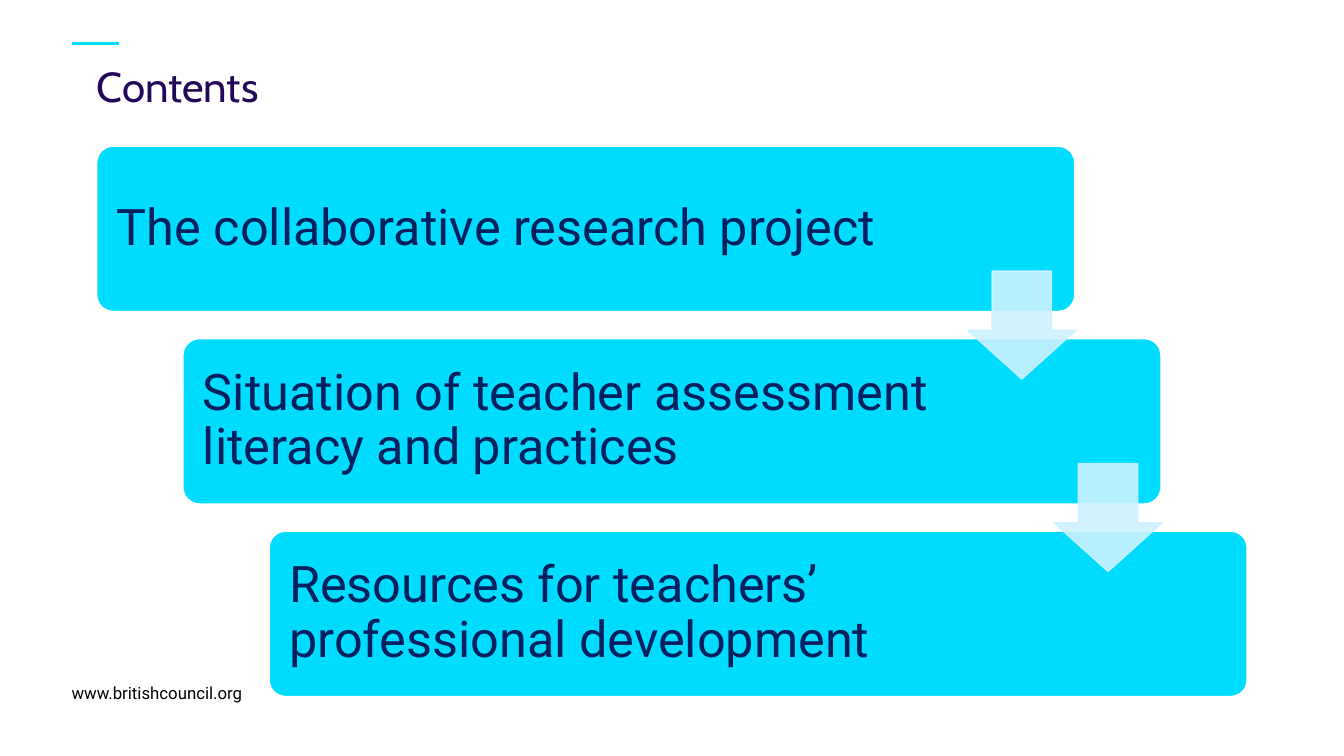
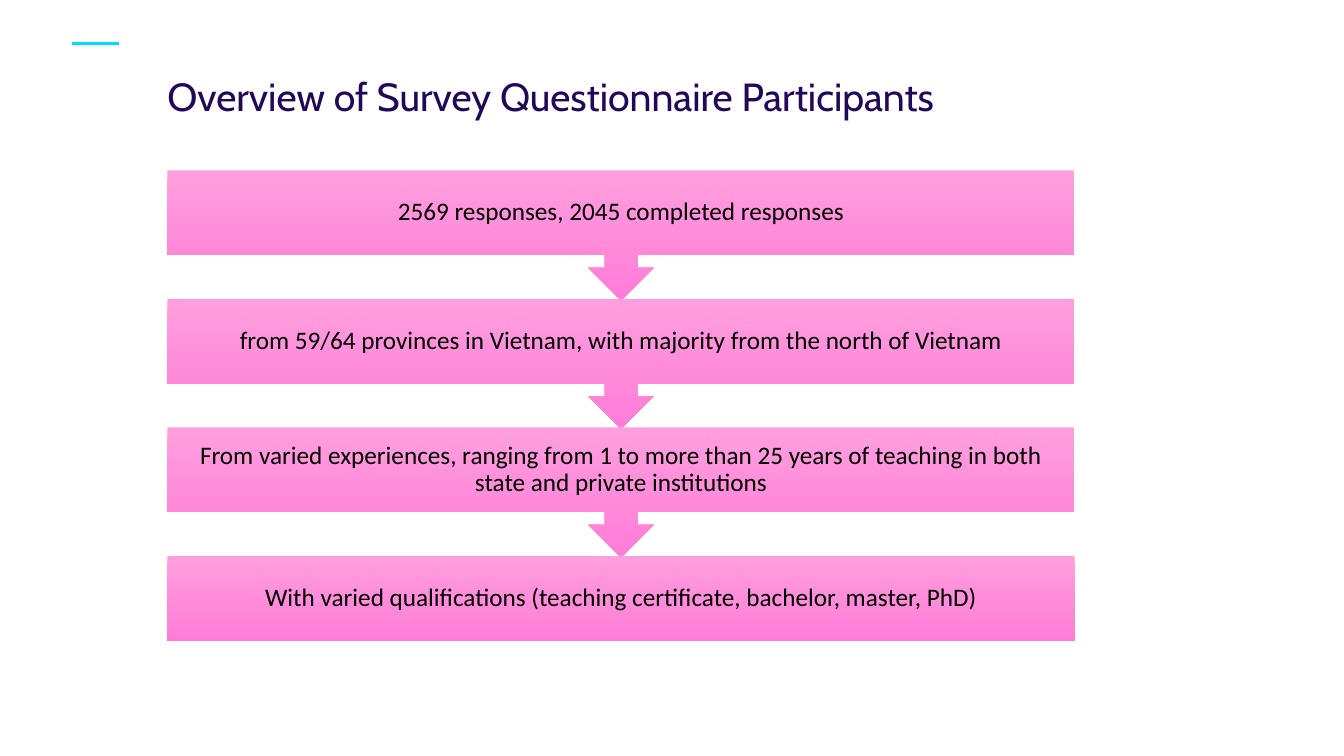
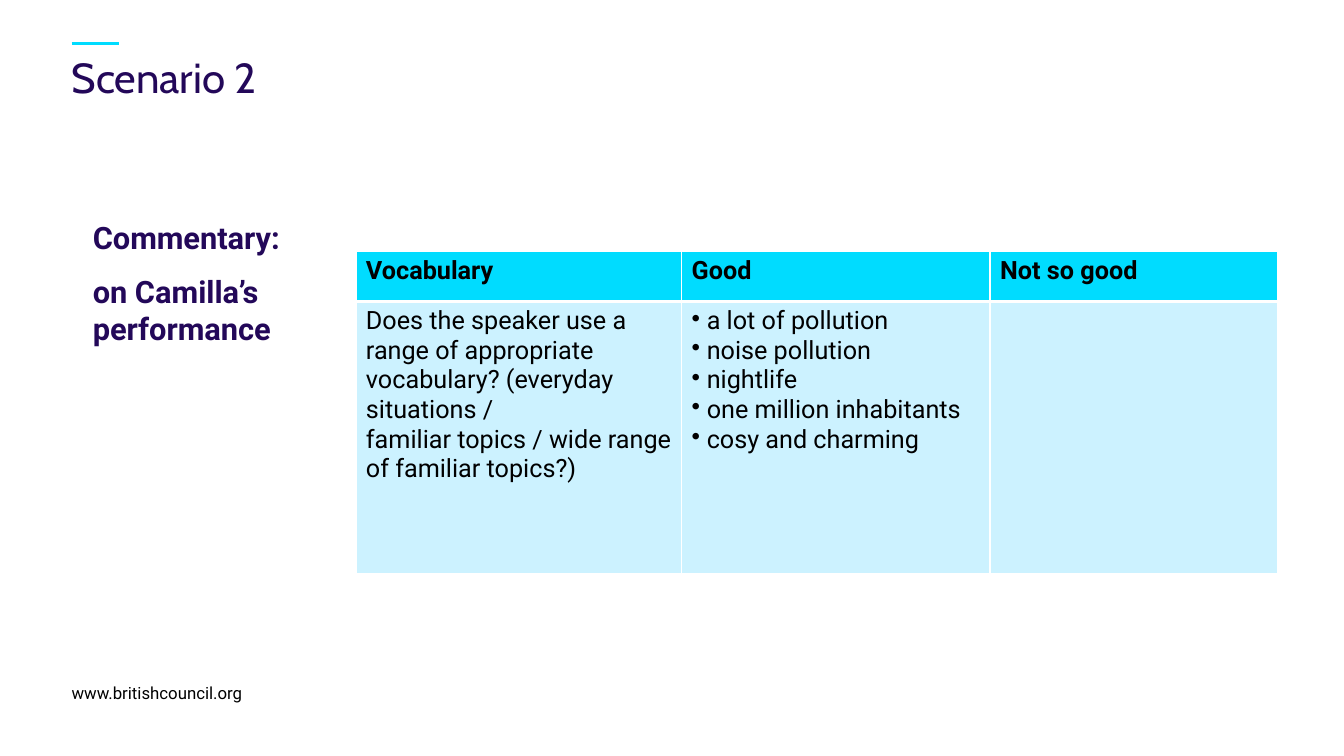
from lxml import etree
from pptx import Presentation
from pptx import util as u
from pptx.dml.color import RGBColor
from pptx.enum import shapes, text
from pptx.oxml.ns import qn

COLORS = {
    "cyan": "00DCFF", "pale": "CCF2FF", "purple": "230859", "navy": "002060",
    "pink_top": "FF9EDF", "pink_bottom": "FF7CD6", "white": "FFFFFF", "black": "000000",
}
SHAPE = shapes.MSO_SHAPE
ANCHOR = text.MSO_ANCHOR
ALIGN = text.PP_ALIGN
TITLE_ONLY, TITLE_AND_BODY = 5, 1


def rgb(name):
    """Return the palette colour of that name."""
    return RGBColor.from_string(COLORS[name])


def inches(*lengths):
    """Convert several lengths to inches."""
    return [u.Inches(length) for length in lengths]


def write(frame, lines, font, size, color, bold=False, align=ALIGN.LEFT, spacing=None, bullet=None):
    """Write one paragraph per line and format it."""
    frame.word_wrap = True
    frame.text = "\n".join(lines)
    for para in frame.paragraphs:
        para.alignment = align
        if spacing:
            para.line_spacing = spacing
        if bullet is not None:
            set_bullet(para, bullet)
        for span in para.runs:
            span.font.name, span.font.size, span.font.bold = font, u.Pt(size), bold
            span.font.color.rgb = rgb(color)


def set_bullet(para, mark):
    """Give a paragraph a hanging bullet, or none if the mark is empty."""
    props = para._p.get_or_add_pPr()
    indent = u.Inches(0.15) if mark else 0
    props.set("marL", str(indent))
    props.set("indent", str(-indent))
    if mark:
        etree.SubElement(props, qn("a:buChar")).set("char", mark)
    else:
        etree.SubElement(props, qn("a:buNone"))


def set_frame(frame, anchor, left=0, top=0, right=0, bottom=0):
    """Set the anchor and the insets of a text frame."""
    frame.auto_size = text.MSO_AUTO_SIZE.NONE
    frame.vertical_anchor = anchor
    frame.margin_left, frame.margin_top, frame.margin_right, frame.margin_bottom = inches(
        left, top, right, bottom)


def place(shape, box):
    """Move and size a shape to a box in inches."""
    shape.left, shape.top, shape.width, shape.height = inches(*box)


def add_page(deck, layout, title, box, size=30, anchor=ANCHOR.TOP):
    """Add a page with the accent line and its title."""
    page = deck.slides.add_slide(deck.slide_layouts[layout])
    accent = page.shapes.add_connector(
        shapes.MSO_CONNECTOR.STRAIGHT, *inches(0.71, 0.43, 1.18, 0.43))
    accent.line.color.rgb = rgb("cyan")
    accent.line.width = u.Pt(2.4)
    etree.SubElement(accent._element.spPr, qn("a:effectLst"))
    heading = page.shapes.title
    place(heading, box)
    set_frame(heading.text_frame, anchor)
    write(heading.text_frame, [title], "Cabin", size, "purple", spacing=u.Pt(33))
    return page


def add_footer(page):
    """Add the web address at the foot of the page."""
    footer = page.shapes.add_textbox(*inches(0.71, 6.77, 11.42, 0.2))
    set_frame(footer.text_frame, ANCHOR.BOTTOM)
    write(footer.text_frame, ["www.britishcouncil.org"], "Roboto", 12, "black")


def add_shape(page, kind, box):
    """Add a preset shape without shadow."""
    shape = page.shapes.add_shape(kind, *inches(*box))
    shape.shadow.inherit = False
    return shape


def paint(shape, fill, line):
    """Give a shape a solid fill and a thin outline."""
    shape.fill.solid()
    shape.fill.fore_color.rgb = rgb(fill)
    shape.line.color.rgb = rgb(line)
    shape.line.width = u.Pt(1)


def add_staircase(page, items, left, top):
    """Draw stepped cards joined by translucent arrows."""
    width, height, step_x, step_y, arrow_size = 9.7, 1.64, 0.855, 1.91, 1.07
    for index, item in enumerate(items):
        card = add_shape(page, SHAPE.ROUNDED_RECTANGLE,
                         (left + index * step_x, top + index * step_y, width, height))
        card.adjustments[0] = 0.1
        paint(card, "cyan", "white")
        set_frame(card.text_frame, ANCHOR.MIDDLE, 0.15, 0.15, 1.8, 0.15)
        write(card.text_frame, [item], "Roboto", 36, "navy", spacing=0.9)
    for index in range(len(items) - 1):
        arrow = add_shape(page, SHAPE.DOWN_ARROW,
                          (left + 8.64 + index * step_x, top + 1.24 + index * step_y,
                           arrow_size, arrow_size))
        arrow.adjustments[0], arrow.adjustments[1] = 0.55, 0.45
        paint(arrow, "pale", "pale")
        for color in arrow._element.spPr.iter(qn("a:srgbClr")):
            etree.SubElement(color, qn("a:alpha")).set("val", "90000")


def add_flow(page, items, left, top):
    """Draw a column of callouts, each pointing to the next."""
    width, body_height, callout_height, step = 9, 0.84, 1.29, 1.275
    for index, item in enumerate(items):
        last = index == len(items) - 1
        kind = SHAPE.RECTANGLE if last else SHAPE.DOWN_ARROW_CALLOUT
        height = body_height if last else callout_height
        callout = add_shape(page, kind, (left, top + index * step, width, height))
        callout.fill.gradient()
        callout.fill.gradient_angle = 270
        for stop, color in zip(callout.fill.gradient_stops, ("pink_top", "pink_bottom")):
            stop.color.rgb = rgb(color)
        callout.line.fill.background()
        set_frame(callout.text_frame, ANCHOR.MIDDLE, 0.14, 0.14, 0.14, 0.14)
        write(callout.text_frame, [item], "Calibri", 18, "black", align=ALIGN.CENTER, spacing=0.9)


def add_commentary(page, lines, box):
    """Fill the body placeholder with bold lines."""
    body = page.placeholders[1]
    place(body, box)
    set_frame(body.text_frame, ANCHOR.TOP)
    write(body.text_frame, lines, "Roboto", 22, "purple", bold=True, bullet="")
    for index, para in enumerate(body.text_frame.paragraphs):
        para.space_before = u.Pt(6 if index else 0)
        para.space_after = u.Pt(6)


def set_borders(cell, **widths):
    """Draw white borders of the given widths in points."""
    props = cell._tc.get_or_add_tcPr()
    for side in "LRTB":
        border = etree.SubElement(props, qn("a:ln" + side))
        border.set("w", str(u.Pt(widths.get(side, 1))))
        fill = etree.SubElement(border, qn("a:solidFill"))
        etree.SubElement(fill, qn("a:srgbClr")).set("val", COLORS["white"])


def add_rating_table(page, headers, cells, box):
    """Add the table of remarks, whose second column is bulleted."""
    table = page.shapes.add_table(2, len(headers), *inches(*box)).table
    for column, width in zip(table.columns, (3.23, 3.06, 2.85)):
        column.width = u.Inches(width)
    for row, height in zip(table.rows, (0.5, 2.7)):
        row.height = u.Inches(height)
    for index, (header, lines) in enumerate(zip(headers, cells)):
        head, body = table.cell(0, index), table.cell(1, index)
        set_borders(head, B=3)
        set_borders(body, T=3)
        for cell, color in ((head, "cyan"), (body, "pale")):
            cell.fill.solid()
            cell.fill.fore_color.rgb = rgb(color)
        write(head.text_frame, [header], "Roboto", 18, "black", bold=True)
        write(body.text_frame, lines, "Roboto", 18, "black", bullet="•" if index == 1 else None)


def main():
    """Build and save the deck."""
    deck = Presentation()
    deck.slide_width, deck.slide_height = inches(13.33, 7.5)

    contents = add_page(deck, TITLE_ONLY, "Contents", (0.96, 0.64, 11.72, 0.87))
    add_staircase(contents, [
        "The collaborative research project",
        "Situation of teacher assessment literacy and practices",
        "Resources for teachers’ professional development",
    ], 0.96, 1.45)
    add_footer(contents)

    overview = add_page(deck, TITLE_ONLY, "Overview of Survey Questionnaire Participants",
                        (1.66, 0.47, 9.46, 0.98), 28, ANCHOR.MIDDLE)
    add_flow(overview, [
        "2569 responses, 2045 completed responses",
        "from 59/64 provinces in Vietnam, with majority from the north of Vietnam",
        "From varied experiences, ranging from 1 to more than 25 years of teaching "
        "in both state and private institutions",
        "With varied qualifications (teaching certificate, bachelor, master, PhD)",
    ], 1.66, 1.69)

    scenario = add_page(deck, TITLE_AND_BODY, "Scenario 2", (0.71, 0.55, 11.97, 0.87))
    add_commentary(scenario, ["Commentary:", "on Camilla’s performance"], (0.92, 2.17, 2.61, 4.5))
    add_rating_table(scenario, ["Vocabulary", "Good", "Not so good"], [
        ["Does the speaker use a range of appropriate vocabulary? (everyday situations /",
         "familiar topics / wide range of familiar topics?)"],
        ["a lot of pollution", "noise pollution", "nightlife",
         "one million inhabitants", "cosy and charming"],
        [],
    ], (3.53, 2.49, 9.14, 3.2))
    add_footer(scenario)

    deck.save("out.pptx")


if __name__ == "__main__":
    main()
